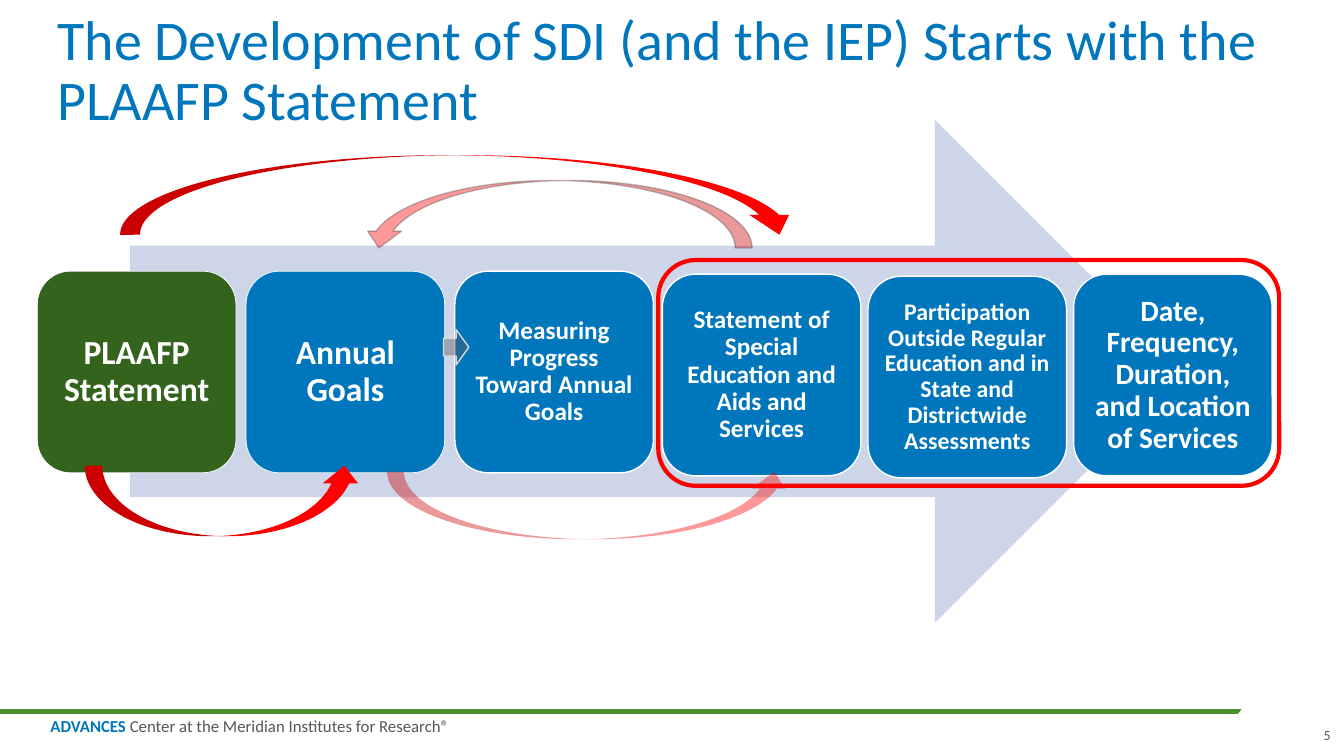
from dataclasses import dataclass
from typing import Optional

import lxml.etree
import pptx
import pptx.dml.color
import pptx.enum.shapes
import pptx.enum.text
import pptx.oxml.ns
import pptx.util

Preset = pptx.enum.shapes.MSO_SHAPE
Align = pptx.enum.text.PP_ALIGN
Anchor = pptx.enum.text.MSO_ANCHOR
qn = pptx.oxml.ns.qn


@dataclass(frozen=True)
class Theme:
    font: str = "Calibri"
    white: str = "FFFFFF"
    blue: str = "0076BD"
    pale_blue: str = "CCD6E8"
    dark_green: str = "33631D"
    rule_green: str = "4C902D"
    red: str = "FF0000"
    grey: str = "59565A"
    light_grey: str = "D9D9D9"
    title: float = 40
    stage_large: float = 24
    stage_wide: float = 21
    stage_medium: float = 18
    stage_small: float = 17
    footer: float = 12
    number: float = 10


THEME = Theme()


@dataclass(frozen=True)
class Area:
    """Left, top, width and height in percent of the slide's size."""
    left: float
    top: float
    width: float
    height: float


@dataclass(frozen=True)
class Figure:
    preset: int
    area: Area
    fill: Optional[str] = None
    line: Optional[str] = None
    line_width: float = 1
    fill_opacity: int = 100
    line_opacity: int = 100
    rotation: float = 0


@dataclass(frozen=True)
class Stage:
    text: str
    left: float
    top: float
    size: float
    inset: float
    line_width: float = 1
    fill: str = THEME.blue


@dataclass(frozen=True)
class Span:
    text: str
    color: str
    bold: bool = False


STAGE_WIDTH, STAGE_HEIGHT = 14.78, 26.67
PLAN_LEFT, PLAN_STEP, PLAN_TOP = 2.78, 15.53, 35.87
SERVICE_LEFT, SERVICE_STEP, SERVICE_TOP = 49.28, 15.3, 36.27

STAGES = [
    Stage("PLAAFP Statement", PLAN_LEFT, PLAN_TOP, THEME.stage_large, 0.1, 0.5,
          THEME.dark_green),
    Stage("Annual Goals", PLAN_LEFT + PLAN_STEP, PLAN_TOP,
          THEME.stage_large, 0.13, 0.5),
    Stage("Measuring Progress Toward Annual Goals", PLAN_LEFT + 2 * PLAN_STEP,
          PLAN_TOP, THEME.stage_medium, 0.07),
    Stage("Date, Frequency, Duration, and Location of Services",
          SERVICE_LEFT + 2 * SERVICE_STEP, SERVICE_TOP, THEME.stage_wide, 0.09),
    Stage("Statement of Special Education and Aids and Services",
          SERVICE_LEFT, SERVICE_TOP, THEME.stage_medium, 0.07),
    Stage("Participation Outside Regular Education and in State and "
          "Districtwide Assessments", SERVICE_LEFT + SERVICE_STEP,
          SERVICE_TOP + 0.27, THEME.stage_small, 0.07),
]

RULE_END_MASK = Figure(Preset.OVAL, Area(91.2, 90.27, 8.93, 7.73), THEME.white,
                       rotation=332.1)
PROCESS_ARROW = Figure(Preset.RIGHT_ARROW, Area(9.68, 15.87, 78.6, 66.53),
                       THEME.pale_blue)
LINKS = [
    Figure(Preset.CURVED_DOWN_ARROW, Area(8.93, 20.53, 50.55, 10.53), THEME.red),
    Figure(Preset.CURVED_UP_ARROW, Area(6.3, 61.6, 20.63, 9.33), THEME.red),
    Figure(Preset.RIGHT_ARROW, Area(33, 43.6, 1.88, 4.67), THEME.grey,
           THEME.light_grey, fill_opacity=40),
    Figure(Preset.ROUNDED_RECTANGLE, Area(48.98, 34.4, 46.2, 29.87),
           line=THEME.red, line_width=3),
    Figure(Preset.CURVED_UP_ARROW, Area(28.8, 62.4, 30.08, 8.93), THEME.red,
           fill_opacity=40),
    Figure(Preset.CURVED_UP_ARROW, Area(26.93, 23.87, 29.03, 8.93), THEME.red,
           THEME.grey, fill_opacity=40, line_opacity=40, rotation=180),
]

deck = pptx.Presentation()
deck.slide_width = pptx.util.Inches(13.333)
deck.slide_height = pptx.util.Inches(7.5)
slide = deck.slides.add_slide(deck.slide_layouts[6])


def across(share: float) -> int:
    return round(deck.slide_width * share / 100)


def down(share: float) -> int:
    return round(deck.slide_height * share / 100)


def place(area: Area) -> tuple[int, int, int, int]:
    return (across(area.left), down(area.top),
            across(area.width), down(area.height))


def rgb(color: str) -> pptx.dml.color.RGBColor:
    return pptx.dml.color.RGBColor.from_string(color)


def set_opacity(owner, percent: int) -> None:
    """Make the solid fill directly under a shape's or line's properties translucent."""
    if percent < 100:
        color = owner.find(qn("a:solidFill")).find(qn("a:srgbClr"))
        lxml.etree.SubElement(color, qn("a:alpha"), val=str(percent * 1000))


def draw(figure: Figure):
    shape = slide.shapes.add_shape(figure.preset, *place(figure.area))
    shape.shadow.inherit = False
    shape.rotation = figure.rotation
    properties = shape.element.spPr
    if figure.fill:
        shape.fill.solid()
        shape.fill.fore_color.rgb = rgb(figure.fill)
        set_opacity(properties, figure.fill_opacity)
    else:
        shape.fill.background()
    if figure.line:
        shape.line.color.rgb = rgb(figure.line)
        shape.line.width = pptx.util.Pt(figure.line_width)
        set_opacity(properties.find(qn("a:ln")), figure.line_opacity)
    else:
        shape.line.fill.background()
    return shape


def write(shape, *spans: Span, size: float, align=Align.LEFT,
          anchor=Anchor.TOP, spacing: float = 1.0, inset: float = 0) -> None:
    frame = shape.text_frame
    frame.word_wrap = True
    frame.vertical_anchor = anchor
    frame.margin_left = frame.margin_right = pptx.util.Inches(inset)
    frame.margin_top = frame.margin_bottom = pptx.util.Inches(inset)
    paragraph = frame.paragraphs[0]
    paragraph.alignment = align
    paragraph.line_spacing = spacing
    for span in spans:
        run = paragraph.add_run()
        run.text = span.text
        run.font.name = THEME.font
        run.font.size = pptx.util.Pt(size)
        run.font.bold = span.bold
        run.font.color.rgb = rgb(span.color)


def draw_stage(stage: Stage) -> None:
    box = draw(Figure(Preset.ROUNDED_RECTANGLE,
                      Area(stage.left, stage.top, STAGE_WIDTH, STAGE_HEIGHT),
                      stage.fill, THEME.white, stage.line_width))
    write(box, Span(stage.text, THEME.white, True), size=stage.size,
          align=Align.CENTER, anchor=Anchor.MIDDLE, spacing=0.9,
          inset=stage.inset)


def add_text_area(area: Area):
    return slide.shapes.add_textbox(*place(area))


def draw_footer_rule() -> None:
    rule = slide.shapes.add_connector(
        pptx.enum.shapes.MSO_CONNECTOR.STRAIGHT,
        0, down(94.13), across(97.5), down(94.13))
    rule.line.color.rgb = rgb(THEME.rule_green)
    rule.line.width = pptx.util.Pt(3)
    lxml.etree.SubElement(rule.element.spPr, qn("a:effectLst"))


def main() -> None:
    draw_footer_rule()
    write(add_text_area(Area(3.75, 95.07, 36, 2.27)),
          Span("ADVANCES", THEME.blue, True),
          Span(" Center at the Meridian Institutes for Research®", THEME.grey),
          size=THEME.footer, spacing=0.85)
    draw(RULE_END_MASK)
    write(add_text_area(Area(4.28, 3.33, 93, 14.27)),
          Span("The Development of SDI (and the IEP) Starts with the "
               "PLAAFP Statement", THEME.blue),
          size=THEME.title, anchor=Anchor.BOTTOM, spacing=0.9)
    draw(PROCESS_ARROW)
    for stage in STAGES:
        draw_stage(stage)
    for link in LINKS:
        draw(link)
    write(add_text_area(Area(97.73, 96, 1.28, 2.27)), Span("5", THEME.grey),
          size=THEME.number, align=Align.RIGHT, anchor=Anchor.BOTTOM)
    deck.save("out.pptx")


if __name__ == "__main__":
    main()
